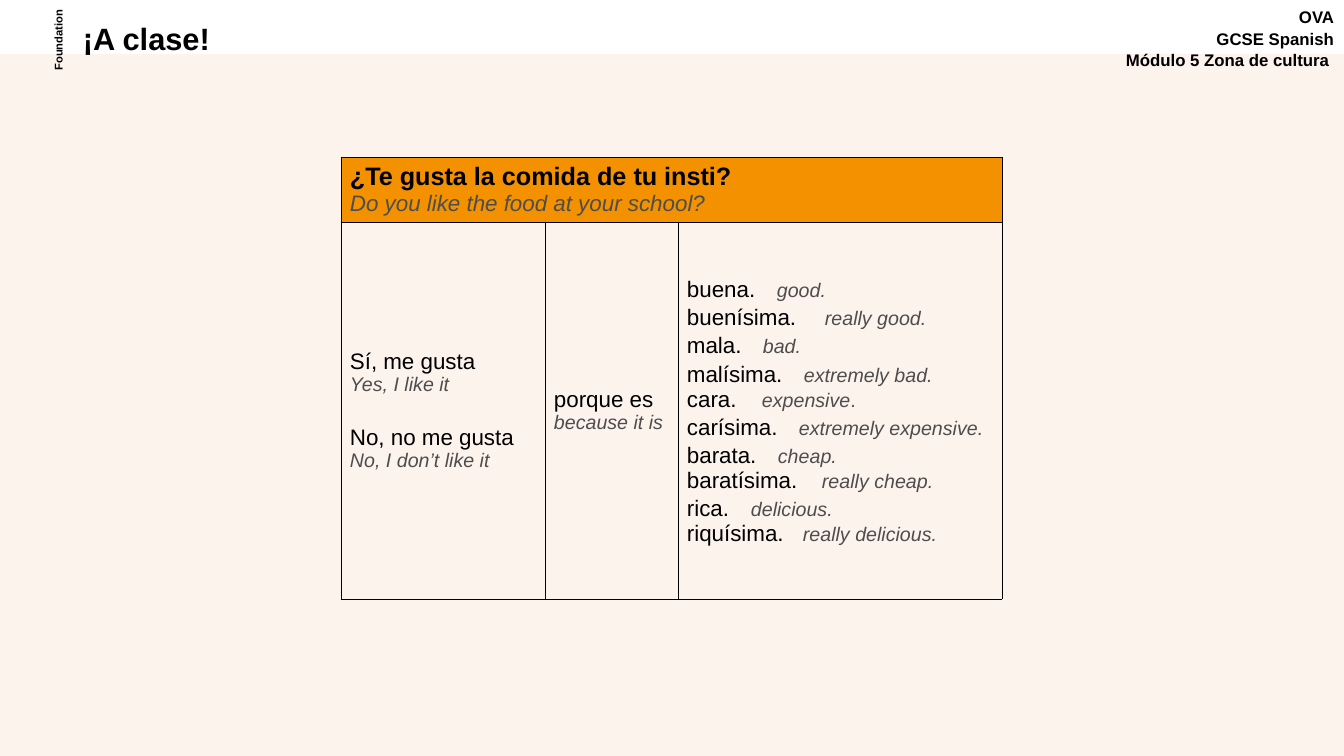
from lxml.etree import SubElement
from pptx import Presentation
from pptx.dml.color import RGBColor
from pptx.enum.shapes import MSO_SHAPE
from pptx.enum.text import MSO_ANCHOR, PP_ALIGN
from pptx.oxml.ns import qn
from pptx.util import Emu, Pt

BLACK = RGBColor(0x00, 0x00, 0x00)
GREY = RGBColor(0x4D, 0x4D, 0x4C)
ORANGE = RGBColor(0xF3, 0x91, 0x00)
CREAM = RGBColor(0xFD, 0xF3, 0xED)

COURSE = ["OVA", "GCSE Spanish", "Módulo 5 Zona de cultura "]
QUESTION = [("¿Te gusta la comida de tu insti?", "Do you like the food at your school?")]
OPINIONS = [("Sí, me gusta", "Yes, I like it"), ("No, no me gusta", "No, I don’t like it")]
REASON = [("porque es", "because it is")]
ADJECTIVES = [
    ("buena.", "good.", "", 90, 18),
    ("buenísima.", "really good.", "", 138, 18),
    ("mala.", "bad.", "", 76, 18),
    ("malísima.", "extremely bad.", "", 117, 18),
    ("cara.", "expensive", ".", 75, 16),
    ("carísima.", "extremely expensive.", "", 112, 18),
    ("barata.", "cheap.", "", 91, 18),
    ("baratísima.", "really cheap.", "", 135, 16),
    ("rica.", "delicious.", "", 64, 18),
    ("riquísima.", "really delicious.", "", 116, 16),
]


def px(length):
    """Turn pixels into EMU."""
    return Emu(round(length * 914400 / 100.8))


def style(font, size, color=BLACK, bold=False, italic=False):
    """Set every property of a font."""
    font.name, font.size, font.bold, font.italic = "Arial", Pt(size), bold, italic
    font.color.rgb = color


def next_paragraph(frame):
    """Return the empty first paragraph of a frame or a new one."""
    first = frame.paragraphs[0]
    return frame.add_paragraph() if first.runs else first


def add_label(slide, box, lines, size, align=PP_ALIGN.LEFT):
    """Add a bold text box and return it."""
    label = slide.shapes.add_textbox(*map(px, box))
    label.text_frame.word_wrap = True
    for line in lines:
        paragraph = next_paragraph(label.text_frame)
        paragraph.add_run().text = line
        paragraph.alignment = align
        style(paragraph.font, size, bold=True)
    return label


def add_header(slide, left, top, width, height):
    """Place the level, title and course in the top band."""
    level = add_label(slide, (left + 6, top + 29, 103, 22), ["Foundation"], 8, PP_ALIGN.CENTER)
    level.rotation = 270
    title = add_label(slide, (left + 73, top + 19, 694, height - 11), ["¡A clase!"], 22)
    title.text_frame.paragraphs[0].line_spacing = 0.9
    course = add_label(slide, (left + width - 236, top + 2, 236, 78), COURSE, 12, PP_ALIGN.RIGHT)
    for line in course.text_frame.paragraphs[1:]:
        line.space_before = Pt(1)


def add_body(slide, left, top, width, height):
    """Fill the area under the header."""
    body = slide.shapes.add_shape(MSO_SHAPE.RECTANGLE, *map(px, (left, top, width, height)))
    body.shadow.inherit = False
    body.fill.solid()
    body.fill.fore_color.rgb = CREAM
    body.line.fill.background()


def outline(cell):
    """Draw a thin black border round a cell."""
    properties = cell._tc.get_or_add_tcPr()
    for side in ("a:lnL", "a:lnR", "a:lnT", "a:lnB"):
        line = SubElement(properties, qn(side), w=str(Pt(0.75)))
        SubElement(SubElement(line, qn("a:solidFill")), qn("a:srgbClr"), val=str(BLACK))


def write_phrases(cell, phrases, size, gloss_size, bold=False):
    """Write Spanish phrases, each above its English meaning."""
    for position, (spanish, english) in enumerate(phrases):
        phrase = next_paragraph(cell.text_frame)
        phrase.add_run().text = spanish
        if position:
            phrase.space_before = Pt(21)
        style(phrase.font, size, bold=bold)
        gloss = next_paragraph(cell.text_frame)
        gloss.add_run().text = english
        style(gloss.font, gloss_size, GREY, italic=True)


def write_adjectives(cell):
    """Write each adjective with its meaning at a tab stop."""
    for spanish, english, ending, stop, gap_size in ADJECTIVES:
        paragraph = next_paragraph(cell.text_frame)
        tabs = SubElement(paragraph._p.get_or_add_pPr(), qn("a:tabLst"))
        SubElement(tabs, qn("a:tab"), pos=str(px(stop)), algn="l")
        pieces = [
            (spanish, 16, BLACK, False),
            ("\t", gap_size, BLACK, False),
            (english, 14, GREY, True),
            (ending, 14, GREY, False),
        ]
        for text, size, color, italic in pieces:
            if text:
                run = paragraph.add_run()
                run.text = text
                style(run.font, size, color, italic=italic)


def add_phrase_table(slide, left, top, width, height):
    """Place the question over the opinions, reason and adjectives."""
    table = slide.shapes.add_table(2, 3, *map(px, (left, top, width, height))).table
    table.first_row = table.horz_banding = False
    for column, column_width in zip(table.columns, (204, 133, width - 337)):
        column.width = px(column_width)
    for row, row_height in zip(table.rows, (64, height - 64)):
        row.height = px(row_height)
    for cell in table.iter_cells():
        outline(cell)
        cell.fill.background()
        cell.vertical_anchor = MSO_ANCHOR.MIDDLE
        cell.margin_left = cell.margin_right = px(9)
        cell.margin_top = cell.margin_bottom = px(4)
    question = table.cell(0, 0)
    question.merge(table.cell(0, 2))
    question.fill.solid()
    question.fill.fore_color.rgb = ORANGE
    write_phrases(question, QUESTION, 18, 16, bold=True)
    write_phrases(table.cell(1, 0), OPINIONS, 16, 14)
    write_phrases(table.cell(1, 1), REASON, 16, 14)
    write_adjectives(table.cell(1, 2))


def main():
    """Build and save the slide."""
    presentation = Presentation()
    presentation.slide_width, presentation.slide_height = px(1344), px(756)
    slide = presentation.slides.add_slide(presentation.slide_layouts[6])
    add_body(slide, 0, 54, 1344, 702)
    add_header(slide, 0, 0, 1344, 54)
    add_phrase_table(slide, 341, 157, 661, 441)
    presentation.save("out.pptx")


if __name__ == "__main__":
    main()
